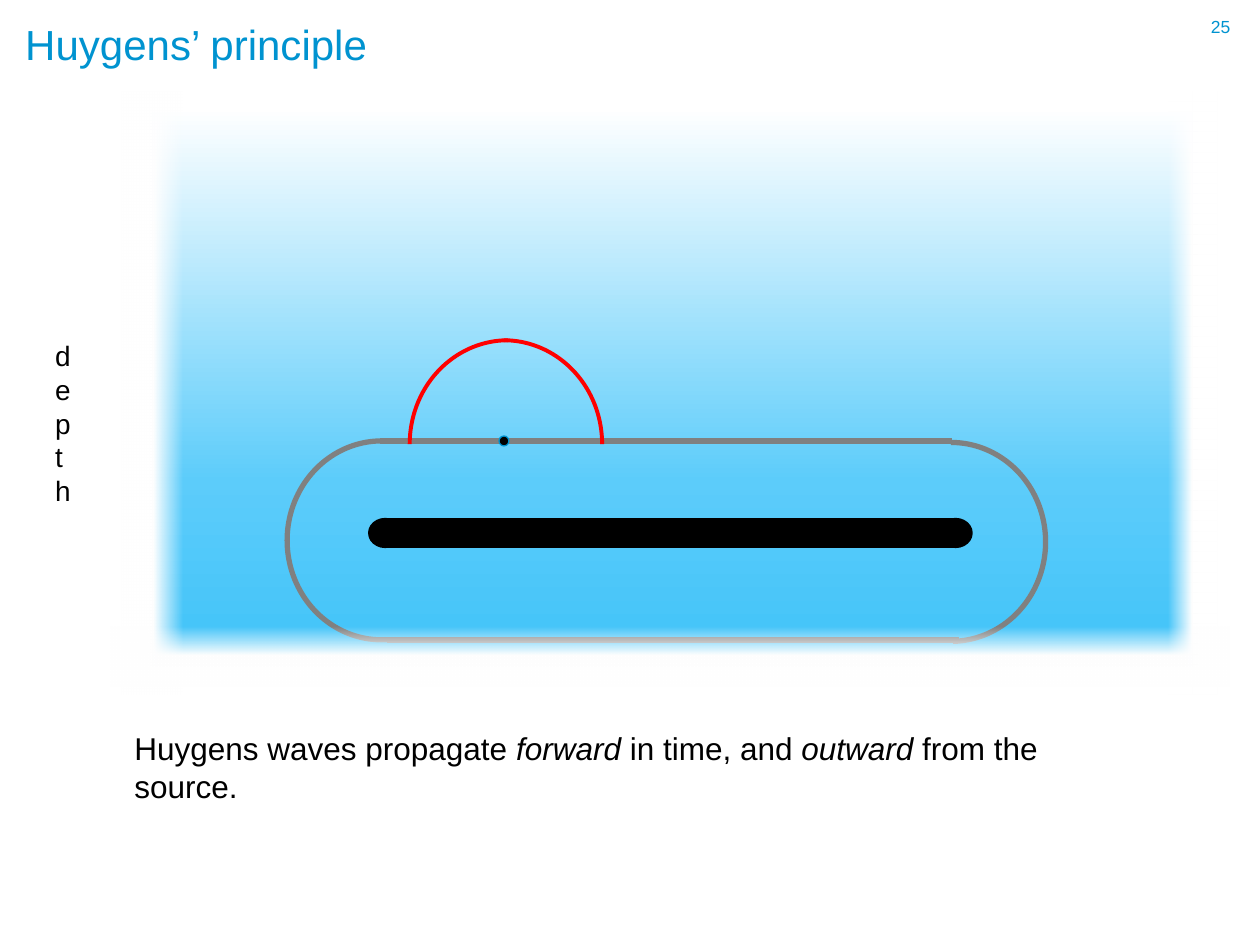
"""Build the slide on Huygens' principle with a wave front around a line source."""
from dataclasses import dataclass
from typing import Optional

from lxml import etree
from pptx import Presentation
from pptx import util as u
from pptx.dml.color import RGBColor
from pptx.enum import shapes, text
from pptx.oxml import ns

BLACK = RGBColor(0x00, 0x00, 0x00)
GREY = RGBColor(0x80, 0x80, 0x80)
RED = RGBColor(0xFF, 0x00, 0x00)
BLUE = RGBColor(0x00, 0x93, 0xD0)
WHITE = RGBColor(0xFF, 0xFF, 0xFF)
WATER = RGBColor(0x40, 0xC3, 0xF9)
SHALLOW = RGBColor(0x5C, 0xCC, 0xFA)


@dataclass(frozen=True)
class Box:
    left: float
    top: float
    width: float
    height: float


@dataclass(frozen=True)
class Stop:
    percent: int
    colour: RGBColor
    opacity: int = 100


@dataclass(frozen=True)
class Gradient:
    box: Box
    stops: tuple[Stop, ...]
    angle: int = 0
    flipped: bool = False
    rotation: int = 0


@dataclass(frozen=True)
class Stroke:
    left: float
    right: float
    height: float
    colour: RGBColor
    weight: float


@dataclass(frozen=True)
class Arc:
    box: Box
    colour: RGBColor
    weight: float
    angles: Optional[tuple[float, float]] = None
    flipped: bool = False


@dataclass(frozen=True)
class Label:
    box: Box
    spans: tuple[str, ...]
    size: int
    colour: RGBColor
    inset: bool = True
    spacing: Optional[float] = None
    stacked: bool = False


FADE = (Stop(0, WHITE, 0), Stop(48, WHITE))
SEA = Gradient(Box(3.02, 2.16, 21.13, 11.28),
               (Stop(0, WATER), Stop(33, SHALLOW), Stop(100, WHITE)), angle=270)
FADES = (
    Gradient(Box(2.46, 1.85, 1.22, 12.14), FADE, flipped=True),
    Gradient(Box(23.55, 1.85, 0.99, 12.14), FADE),
    Gradient(Box(12.9, 1.96, 1.22, 22.56), FADE, flipped=True, rotation=270),
)
SOURCE = Stroke(7.77, 19.3, 10.74, BLACK, 17.25)
SOURCE_ENDS = (Box(7.42, 10.44, 0.69, 0.61), Box(18.92, 10.44, 0.69, 0.61))
FRONT_SIDES = (Stroke(7.67, 19.2, 8.89, GREY, 3), Stroke(7.8, 19.33, 12.9, GREY, 3))
FRONT_CAPS = (
    Arc(Box(17.27, 8.92, 3.81, 4.01), GREY, 3, (269.9, 88.92)),
    Arc(Box(5.79, 8.89, 3.81, 4.01), GREY, 3, (86.98, 269.45)),
)
WAVELET = (
    Arc(Box(8.18, 6.86, 3.96, 4.19), RED, 2.25),
    Arc(Box(8.26, 6.86, 3.96, 4.19), RED, 2.25, flipped=True),
)
WAVELET_ORIGIN = Box(10.06, 8.79, 0.2, 0.2)
HEADINGS = (
    Label(Box(24.41, 0.33, 0.76, 0.66), ("25",), 10, BLUE, False, u.Pt(12)),
    Label(Box(0.51, 0.48, 22.17, 1.04), ("Huygens’ principle",), 24, BLUE, False, 0.9),
)
CAPTION = Label(
    Box(2.46, 14.58, 20.29, 1.8),
    ("Huygens waves propagate ", "forward", " in time, and ", "outward", " from the source."),
    18, BLACK)
DEPTH = Label(Box(0.86, 6.71, 1.24, 4.19), ("depth",), 16, BLACK, stacked=True)


def lengths(box: Box) -> tuple:
    """Give the four lengths of a box."""
    return u.Cm(box.left), u.Cm(box.top), u.Cm(box.width), u.Cm(box.height)


def add_plain(page, kind, box: Box, flipped: bool = False):
    """Add a shape without shadow, fill or line."""
    shape = page.shapes.add_shape(kind, *lengths(box))
    shape.shadow.inherit = False
    shape.fill.background()
    shape.line.fill.background()
    if flipped:
        shape._element.spPr.find(ns.qn("a:xfrm")).set("flipH", "1")
    return shape


def add_gradient(page, gradient: Gradient) -> None:
    """Add a rectangle with a linear gradient."""
    shape = add_plain(page, shapes.MSO_SHAPE.RECTANGLE, gradient.box, gradient.flipped)
    shape.rotation = gradient.rotation
    fill = etree.Element(ns.qn("a:gradFill"), rotWithShape="1")
    stops = etree.SubElement(fill, ns.qn("a:gsLst"))
    for stop in gradient.stops:
        place = etree.SubElement(stops, ns.qn("a:gs"), pos=str(stop.percent * 1000))
        colour = etree.SubElement(place, ns.qn("a:srgbClr"), val=str(stop.colour))
        if stop.opacity < 100:
            etree.SubElement(colour, ns.qn("a:alpha"), val=str(stop.opacity * 1000))
    etree.SubElement(fill, ns.qn("a:lin"), ang=str(gradient.angle * 60000), scaled="0")
    properties = shape._element.spPr
    properties.replace(properties.find(ns.qn("a:noFill")), fill)


def add_stroke(page, stroke: Stroke) -> None:
    """Add a level straight line."""
    height = u.Cm(stroke.height)
    line = page.shapes.add_connector(
        shapes.MSO_CONNECTOR.STRAIGHT, u.Cm(stroke.left), height, u.Cm(stroke.right), height)
    line.line.color.rgb = stroke.colour
    line.line.width = u.Pt(stroke.weight)
    etree.SubElement(line._element.spPr, ns.qn("a:effectLst"))


def add_arc(page, arc: Arc) -> None:
    """Add an arc, a quarter circle unless its angles are given."""
    shape = add_plain(page, shapes.MSO_SHAPE.ARC, arc.box, arc.flipped)
    shape.line.color.rgb = arc.colour
    shape.line.width = u.Pt(arc.weight)
    for index, angle in enumerate(arc.angles or ()):
        shape.adjustments[index] = angle * 0.6


def add_dot(page, box: Box, outline: Optional[RGBColor] = None) -> None:
    """Add a black ellipse."""
    shape = add_plain(page, shapes.MSO_SHAPE.OVAL, box)
    shape.fill.solid()
    shape.fill.fore_color.rgb = BLACK
    if outline is not None:
        shape.line.color.rgb = outline
        shape.line.width = u.Pt(0.75)


def add_label(page, label: Label) -> None:
    """Add a text box in which every second span is italic."""
    frame = page.shapes.add_textbox(*lengths(label.box)).text_frame
    frame.word_wrap = True
    frame.vertical_anchor = text.MSO_ANCHOR.TOP
    if not label.inset:
        frame.margin_left = frame.margin_top = frame.margin_right = frame.margin_bottom = 0
    if label.stacked:
        frame._txBody.bodyPr.set("vert", "wordArtVert")
    para = frame.paragraphs[0]
    if label.spacing is not None:
        para.line_spacing = label.spacing
    for index, words in enumerate(label.spans):
        span = para.add_run()
        span.text = words
        span.font.name = "Arial"
        span.font.size = u.Pt(label.size)
        span.font.color.rgb = label.colour
        span.font.italic = index % 2 == 1


def main() -> None:
    """Draw the slide and save the deck."""
    deck = Presentation()
    deck.slide_width, deck.slide_height = u.Cm(25.4), u.Cm(19.05)
    page = deck.slides.add_slide(deck.slide_layouts[6])
    for heading in HEADINGS:
        add_label(page, heading)
    add_gradient(page, SEA)
    add_stroke(page, SOURCE)
    for end in SOURCE_ENDS:
        add_dot(page, end)
    for side in FRONT_SIDES:
        add_stroke(page, side)
    for cap in FRONT_CAPS:
        add_arc(page, cap)
    add_label(page, CAPTION)
    for fade in FADES:
        add_gradient(page, fade)
    add_label(page, DEPTH)
    add_dot(page, WAVELET_ORIGIN, BLUE)
    for arc in WAVELET:
        add_arc(page, arc)
    deck.save("out.pptx")


if __name__ == "__main__":
    main()
